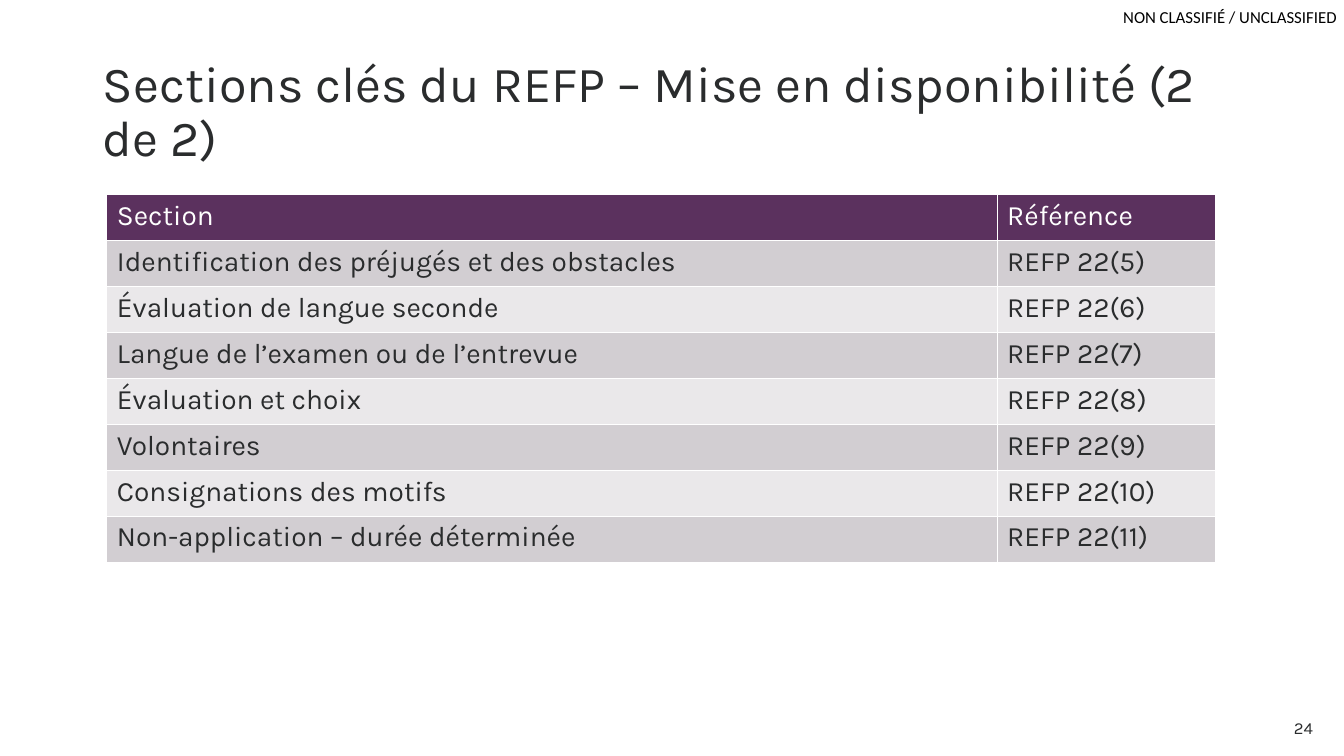
from pptx import Presentation
from pptx import util as u
from pptx.dml.color import RGBColor
from pptx.enum import text

INK = "2A2C2D"
WHITE = "FFFFFF"


def color(value):
    return RGBColor.from_string(value)


def write(paragraph, words, size, ink, face="Karla"):
    run = paragraph.add_run()
    run.text = words
    run.font.size = u.Pt(size)
    run.font.name = face
    run.font.bold = False
    run.font.color.rgb = color(ink)


deck = Presentation()
deck.slide_width = u.Inches(13.33)
deck.slide_height = u.Inches(7.5)
slide = deck.slides.add_slide(deck.slide_layouts[5])

heading = slide.shapes.title
heading.left, heading.top = u.Inches(0.92), u.Inches(0.4)
heading.width, heading.height = u.Inches(11.5), u.Inches(1.45)
heading.text_frame.word_wrap = True
heading.text_frame.auto_size = text.MSO_AUTO_SIZE.NONE
heading.text_frame.vertical_anchor = text.MSO_ANCHOR.MIDDLE
heading_line = heading.text_frame.paragraphs[0]
heading_line.alignment = text.PP_ALIGN.LEFT
heading_line.line_spacing = 0.9
write(heading_line, "Sections clés du REFP – Mise en disponibilité (2 de 2)", 36, INK)

classification = slide.shapes.add_textbox(
    u.Inches(11.14), u.Inches(0.07), u.Inches(2.16), u.Inches(0.2)
).text_frame
classification.margin_left = classification.margin_right = 0
classification.margin_top = classification.margin_bottom = 0
write(classification.paragraphs[0], "NON CLASSIFIÉ / UNCLASSIFIED", 12, "000000", "Calibri")

sections = [
    "Identification des préjugés et des obstacles",
    "Évaluation de langue seconde",
    "Langue de l’examen ou de l’entrevue",
    "Évaluation et choix",
    "Volontaires",
    "Consignations des motifs",
    "Non-application – durée déterminée",
]
rows = [("Section", "Référence")]
rows += [(section, f"REFP 22({number})") for number, section in enumerate(sections, 5)]

references = slide.shapes.add_table(
    len(rows), 2, u.Inches(1.06), u.Inches(1.93), u.Inches(11), u.Inches(3.65)
).table
references.columns[0].width = u.Inches(8.83)
references.columns[1].width = u.Inches(2.17)

for row, entries in enumerate(rows):
    if row == 0:
        band, ink = "5B315E", WHITE
    else:
        band, ink = ("D2CED2" if row % 2 else "EAE8EA"), INK
    for column, entry in enumerate(entries):
        cell = references.cell(row, column)
        cell.fill.solid()
        cell.fill.fore_color.rgb = color(band)
        write(cell.text_frame.paragraphs[0], entry, 20, ink)

page_number = slide.shapes.add_textbox(
    u.Inches(11.81), u.Inches(7.02), u.Inches(1.31), u.Inches(0.4)
).text_frame
page_number.word_wrap = True
page_number.vertical_anchor = text.MSO_ANCHOR.MIDDLE
page_number.paragraphs[0].alignment = text.PP_ALIGN.RIGHT
write(page_number.paragraphs[0], "24", 12, INK)

deck.save("out.pptx")
